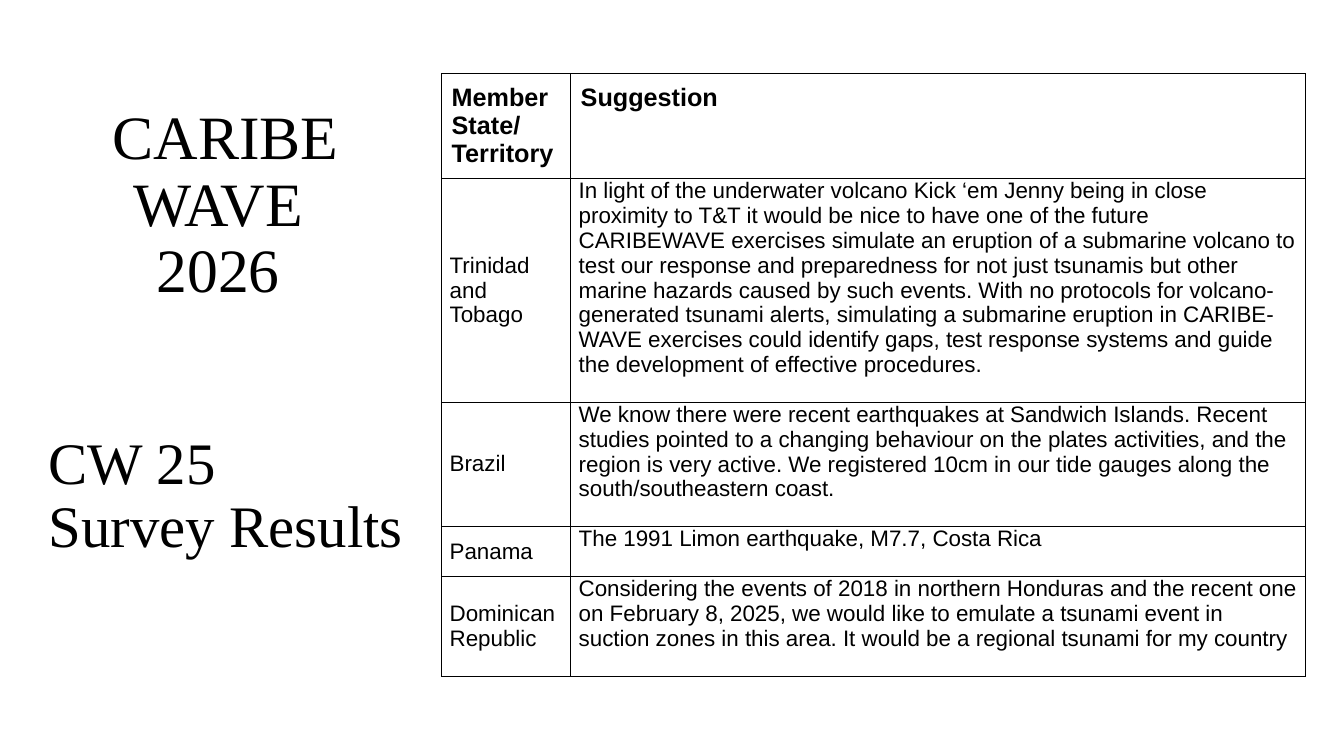
from lxml.etree import SubElement
from pptx import Presentation
from pptx.dml.color import RGBColor
from pptx.enum.text import MSO_ANCHOR, MSO_AUTO_SIZE, PP_ALIGN
from pptx.oxml.ns import qn
from pptx.util import Inches, Pt

TITLE = [
    ("CARIBE WAVE ", 44, PP_ALIGN.CENTER, 0),
    ("2026 ", 44, PP_ALIGN.CENTER, 0),
    ("CW 25", 42, PP_ALIGN.LEFT, 91),
    ("Survey Results", 42, PP_ALIGN.LEFT, 0),
]
ROWS = [
    ("Member State/\nTerritory", "Suggestion"),
    ("Trinidad and Tobago",
     "In light of the underwater volcano Kick ‘em Jenny being in close proximity to T&T "
     "it would be nice to have one of the future CARIBEWAVE exercises simulate an eruption "
     "of a submarine volcano to test our response and preparedness for not just tsunamis "
     "but other marine hazards caused by such events. With no protocols for "
     "volcano-generated tsunami alerts, simulating a submarine eruption in CARIBE-WAVE "
     "exercises could identify gaps, test response systems and guide the development of "
     "effective procedures."),
    ("Brazil",
     "We know there were recent earthquakes at Sandwich Islands. Recent studies pointed to "
     "a changing behaviour on the plates activities, and the region is very active. We "
     "registered 10cm in our tide gauges along the south/southeastern coast."),
    ("Panama", "The 1991 Limon earthquake, M7.7, Costa Rica"),
    ("Dominican Republic",
     "Considering the events of 2018 in northern Honduras and the recent one on "
     "February 8, 2025, we would like to emulate a tsunami event in suction zones in this "
     "area. It would be a regional tsunami for my country"),
]
COL_WIDTHS = [1.28, 7.29]
ROW_HEIGHTS = [1.04, 2.22, 1.23, 0.5, 0.99]
BLACK, WHITE = "000000", "FFFFFF"


def rgb(value):
    return RGBColor.from_string(value)


def set_font(p, name, size, bold=False):
    p.font.name = name
    p.font.size = Pt(size)
    p.font.bold = bold
    p.font.color.rgb = rgb(BLACK)


def add_borders(cell):
    tcPr = cell._tc.get_or_add_tcPr()
    for i, side in enumerate(("a:lnL", "a:lnR", "a:lnT", "a:lnB")):
        ln = tcPr.makeelement(qn(side), {"w": str(Pt(0.75))})
        fill = SubElement(ln, qn("a:solidFill"))
        SubElement(fill, qn("a:srgbClr"), val=BLACK)
        tcPr.insert(i, ln)


def add_title(s):
    sp = s.shapes.title
    sp.left, sp.top, sp.width, sp.height = map(Inches, (0.38, 0.38, 3.72, 5.86))
    tf = sp.text_frame
    tf.text = "\n".join(text for text, *_ in TITLE)
    tf.word_wrap = True
    tf.auto_size = MSO_AUTO_SIZE.NONE
    tf.vertical_anchor = MSO_ANCHOR.MIDDLE
    for p, (_, size, align, gap) in zip(tf.paragraphs, TITLE):
        p.alignment = align
        p.line_spacing = 0.9
        p.space_before = Pt(gap)
        set_font(p, "Times New Roman", size)


def fill_cell(cell, text, header, centred):
    cell.text = text
    cell.margin_left = cell.margin_right = Inches(0.1 if header else 0.08)
    cell.margin_top = cell.margin_bottom = Inches(0.1 if header else 0)
    cell.vertical_anchor = MSO_ANCHOR.MIDDLE if centred else MSO_ANCHOR.TOP
    cell.fill.solid()
    cell.fill.fore_color.rgb = rgb(WHITE)
    add_borders(cell)
    for p in cell.text_frame.paragraphs:
        set_font(p, "Arial", 18 if header else 16, header)


def add_suggestions(s):
    frame = s.shapes.add_table(len(ROWS), len(COL_WIDTHS), Inches(4.38), Inches(0.73),
                               Inches(sum(COL_WIDTHS)), Inches(sum(ROW_HEIGHTS)))
    table = frame.table
    table.first_row = table.horz_banding = False
    for col, width in zip(table.columns, COL_WIDTHS):
        col.width = Inches(width)
    for r, (row, height) in enumerate(zip(table.rows, ROW_HEIGHTS)):
        row.height = Inches(height)
        for c, text in enumerate(ROWS[r]):
            fill_cell(row.cells[c], text, r == 0, r > 0 and c == 0)


def main():
    prs = Presentation()
    prs.slide_width, prs.slide_height = Inches(13.33), Inches(7.5)
    s = prs.slides.add_slide(prs.slide_layouts[5])
    add_title(s)
    add_suggestions(s)
    prs.save("out.pptx")


if __name__ == "__main__":
    main()
